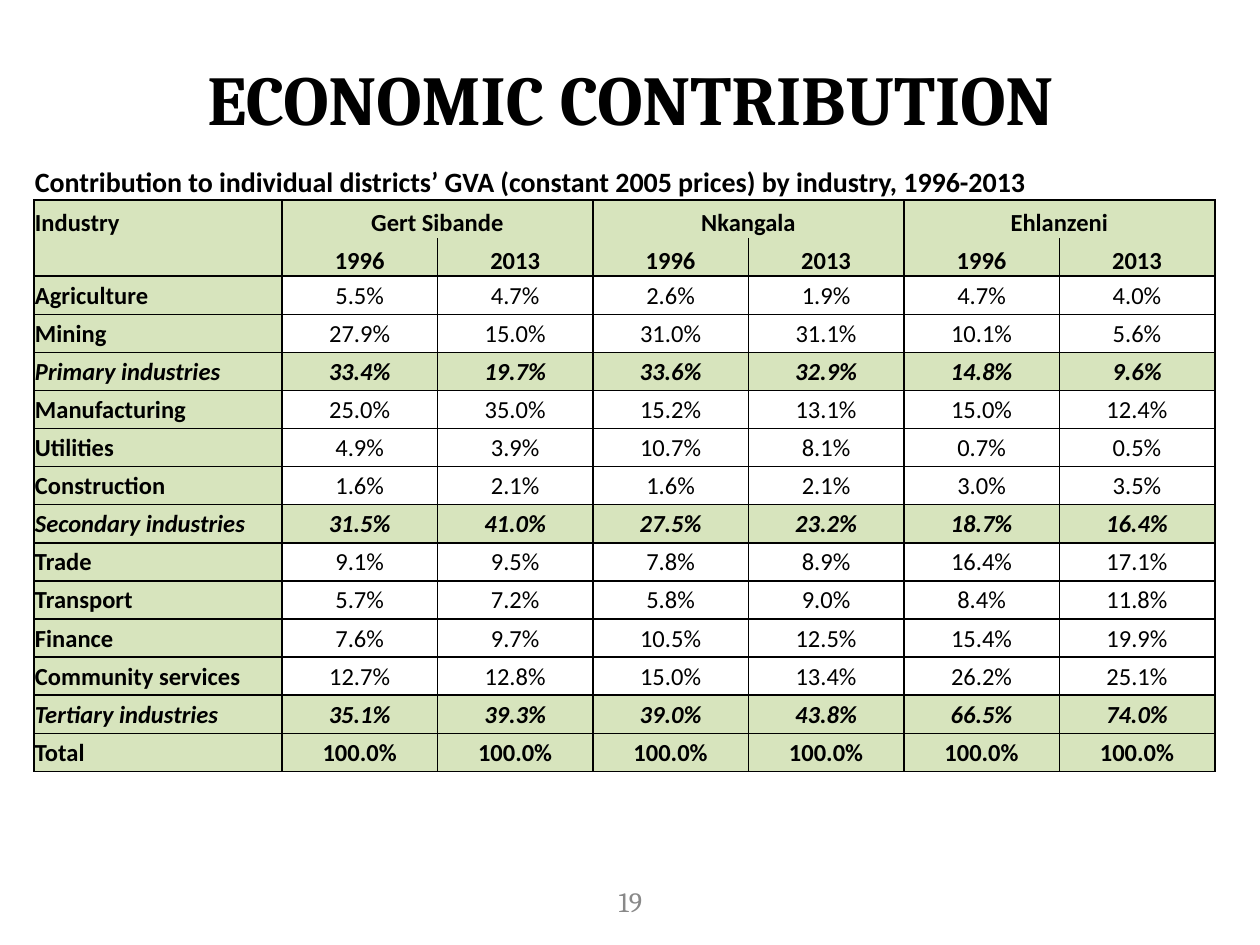
from lxml import etree
from pptx import Presentation
from pptx.dml.color import RGBColor
from pptx.enum.text import MSO_ANCHOR, PP_ALIGN
from pptx.oxml.ns import qn
from pptx.util import Pt

LEFT, CENTER = PP_ALIGN.LEFT, PP_ALIGN.CENTER
MIDDLE, BOTTOM = MSO_ANCHOR.MIDDLE, MSO_ANCHOR.BOTTOM
EMU_PER_PX = 914400 / 126
BLACK, GREEN, GREY = "000000", "D7E4BD", "898989"


def px(length):
    return round(length * EMU_PER_PX)


def write(frame, text, size, font, colour, align, bold=False, italic=False):
    para = frame.paragraphs[0]
    para.alignment = align
    if not text:
        etree.SubElement(para._p, qn("a:endParaRPr"), sz=str(size * 100))
        return
    para.text = text
    span = para.runs[0]
    span.font.size = Pt(size)
    span.font.name = font
    span.font.bold = bold
    span.font.italic = italic
    span.font.color.rgb = RGBColor.from_string(colour)


deck = Presentation()
deck.slide_width, deck.slide_height = px(1260), px(945)
page = deck.slides.add_slide(deck.slide_layouts[6])

# Title and page number
for text, area, size, colour, bold in [
    ("ECONOMIC CONTRIBUTION", (64, 0, 1133, 195), 40, BLACK, True),
    ("19", (431, 876, 399, 50), 16, GREY, False),
]:
    box = page.shapes.add_textbox(*map(px, area))
    box.text_frame.word_wrap = True
    box.text_frame.vertical_anchor = MIDDLE
    write(box.text_frame, text, size, "Cambria", colour, CENTER, bold)

# Table contents
caption = "Contribution to individual districts’ GVA (constant 2005 prices) by industry, 1996-2013"
rows = [
    [caption] + [""] * 6,
    ["Industry", "Gert Sibande", "", "Nkangala", "", "Ehlanzeni", ""],
    [""] + ["1996", "2013"] * 3,
    ["Agriculture", "5.5%", "4.7%", "2.6%", "1.9%", "4.7%", "4.0%"],
    ["Mining", "27.9%", "15.0%", "31.0%", "31.1%", "10.1%", "5.6%"],
    ["Primary industries", "33.4%", "19.7%", "33.6%", "32.9%", "14.8%", "9.6%"],
    ["Manufacturing", "25.0%", "35.0%", "15.2%", "13.1%", "15.0%", "12.4%"],
    ["Utilities", "4.9%", "3.9%", "10.7%", "8.1%", "0.7%", "0.5%"],
    ["Construction", "1.6%", "2.1%", "1.6%", "2.1%", "3.0%", "3.5%"],
    ["Secondary industries", "31.5%", "41.0%", "27.5%", "23.2%", "18.7%", "16.4%"],
    ["Trade", "9.1%", "9.5%", "7.8%", "8.9%", "16.4%", "17.1%"],
    ["Transport", "5.7%", "7.2%", "5.8%", "9.0%", "8.4%", "11.8%"],
    ["Finance", "7.6%", "9.7%", "10.5%", "12.5%", "15.4%", "19.9%"],
    ["Community services", "12.7%", "12.8%", "15.0%", "13.4%", "26.2%", "25.1%"],
    ["Tertiary industries", "35.1%", "39.3%", "39.0%", "43.8%", "66.5%", "74.0%"],
    ["Total"] + ["100.0%"] * 6,
]

# Table grid
table = page.shapes.add_table(len(rows), 7, px(34), px(165), px(1181), px(607)).table
table.first_row = table.horz_banding = False
for index, column in enumerate(table.columns):
    column.width = px(933) // 6 if index else px(248)
for index, row in enumerate(table.rows):
    row.height = px(572) // 15 if index else px(35)
table.cell(0, 0).merge(table.cell(0, 6))
for left in (1, 3, 5):
    table.cell(1, left).merge(table.cell(1, left + 1))

# Cells: the caption and the two header rows have only some of their borders
row_borders = {0: "B", 1: "LRT", 2: "LRB"}
for row_index, values in enumerate(rows):
    subtotal = values[0].endswith("industries")
    header = row_index < 3
    strong_row = header or subtotal or values[0] == "Total"
    for column_index, text in enumerate(values):
        cell = table.cell(row_index, column_index)
        cell.margin_left = cell.margin_right = cell.margin_top = px(1)
        cell.margin_bottom = 0
        cell.vertical_anchor = BOTTOM if header else MIDDLE
        strong = strong_row or column_index == 0
        write(cell.text_frame, text, 14 if row_index else 16, "Calibri", BLACK,
              CENTER if column_index else LEFT, strong, subtotal)

        properties = cell._tc.get_or_add_tcPr()
        for side in "LRTB":
            line = etree.SubElement(properties, qn(f"a:ln{side}"), w=str(Pt(1)))
            if side in row_borders.get(row_index, "LRTB"):
                paint = etree.SubElement(line, qn("a:solidFill"))
                etree.SubElement(paint, qn("a:srgbClr"), val=BLACK)
            else:
                etree.SubElement(line, qn("a:noFill"))

        if strong and row_index:
            cell.fill.solid()
            cell.fill.fore_color.rgb = RGBColor.from_string(GREEN)
        else:
            cell.fill.background()

deck.save("out.pptx")
